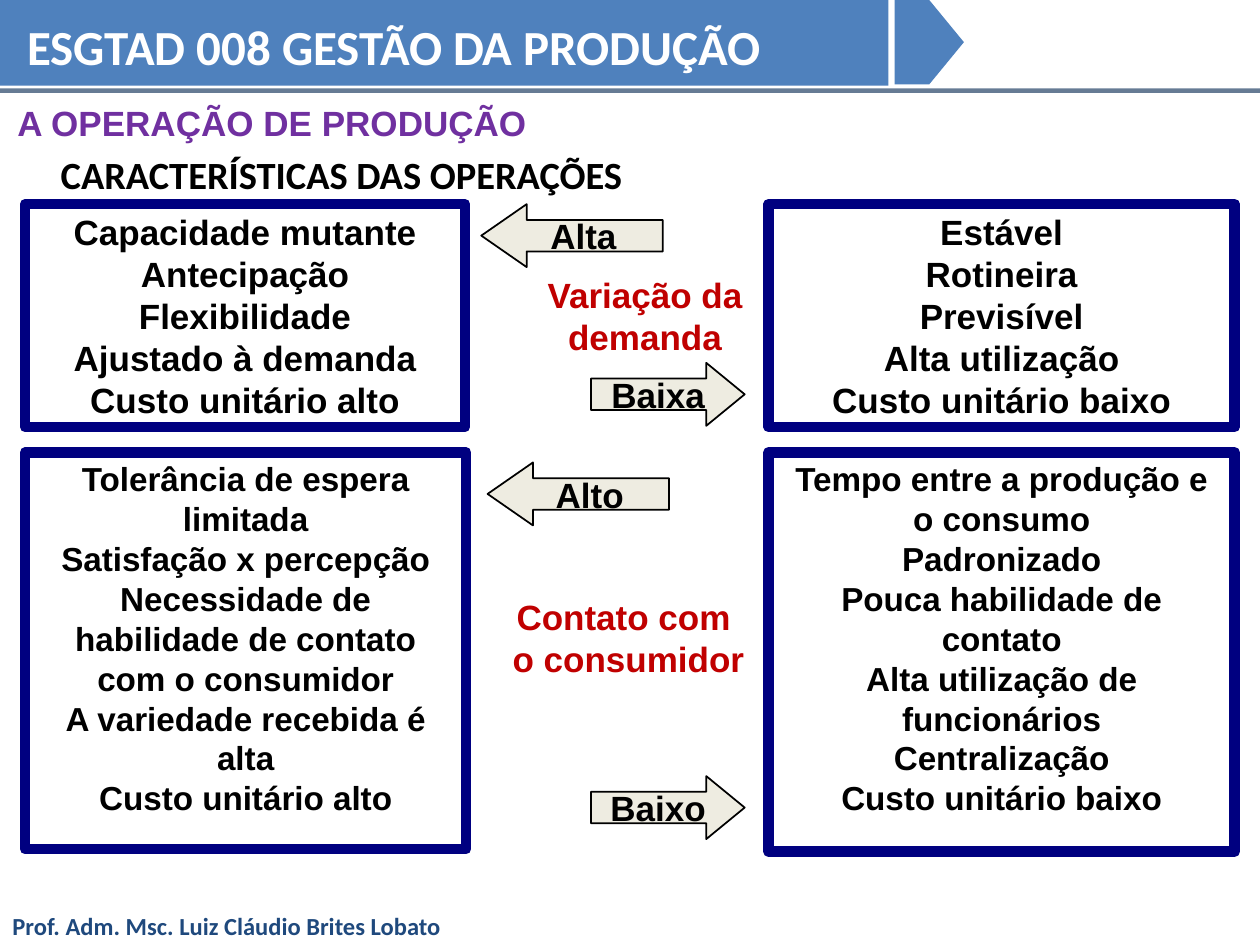
from lxml import etree
from pptx import Presentation
from pptx.dml.color import RGBColor
from pptx.enum.shapes import MSO_CONNECTOR, MSO_SHAPE as SHAPE
from pptx.enum.text import MSO_ANCHOR as ANCHOR, PP_ALIGN as ALIGN
from pptx.oxml.ns import qn
from pptx.util import Inches, Pt


def rgb(value):
    return RGBColor.from_string(value)


class Deck:
    BLUE, NAVY, RED, BEIGE = "4F81BD", "000080", "C00000", "EEECE1"

    def __init__(self):
        self.prs = Presentation()
        self.prs.slide_width, self.prs.slide_height = Inches(10), Inches(7.5)
        self.s = self.prs.slides.add_slide(self.prs.slide_layouts[6])

    def add_lines(self, tf, lines, size, color="000000", font="Arial", align=ALIGN.CENTER):
        for i, line in enumerate(lines):
            p = tf.paragraphs[0] if i == 0 else tf.add_paragraph()
            p.alignment = align
            r = p.add_run()
            r.text = line
            r.font.size, r.font.bold, r.font.name = Pt(size), True, font
            r.font.color.rgb = rgb(color)

    def text(self, x, y, w, h, lines, size, **style):
        tb = self.s.shapes.add_textbox(*map(Inches, (x, y, w, h)))
        tb.text_frame.word_wrap = True
        self.add_lines(tb.text_frame, lines, size, **style)

    def shape(self, kind, x, y, w, h, fill=None, line=None, width=1):
        sp = self.s.shapes.add_shape(kind, *map(Inches, (x, y, w, h)))
        sp.shadow.inherit = False
        if fill:
            sp.fill.solid()
            sp.fill.fore_color.rgb = rgb(fill)
        else:
            sp.fill.background()
        if line:
            sp.line.color.rgb = rgb(line)
            sp.line.width = Pt(width)
        else:
            sp.line.fill.background()
        return sp

    def box(self, x, y, w, h, lines, size):
        sp = self.shape(SHAPE.RECTANGLE, x, y, w, h, line=self.NAVY, width=6)
        tf = sp.text_frame
        tf.word_wrap, tf.vertical_anchor = True, ANCHOR.TOP
        self.add_lines(tf, lines, size)

    def arrow(self, x, y, w, head, label, left=False):
        sp = self.shape(SHAPE.RIGHT_ARROW, x, y, w, 0.5, self.BEIGE, "000000")
        sp.adjustments[0], sp.adjustments[1] = 0.5, head
        tf = sp.text_frame
        tf.word_wrap, tf.vertical_anchor = False, ANCHOR.MIDDLE
        self.add_lines(tf, [label], 20)
        if left:  # turn the arrow round, keep its label upright
            sp.rotation = 180
            sp._element.txBody.find(qn("a:bodyPr")).set("rot", "10800000")

    def rule(self, y, color, width, opacity):
        c = self.s.shapes.add_connector(
            MSO_CONNECTOR.STRAIGHT, 0, Inches(y), Inches(10), Inches(y))
        c.line.color.rgb, c.line.width = rgb(color), Pt(width)
        clr = c._element.spPr.find(".//" + qn("a:srgbClr"))
        etree.SubElement(clr, qn("a:alpha")).set("val", str(opacity * 1000))
        etree.SubElement(c._element.spPr, qn("a:effectLst"))


def main():
    d = Deck()

    # Banner and footer
    d.shape(SHAPE.RECTANGLE, 0, 0, 7.05, 0.68, d.BLUE)
    d.rule(0.72, "17375E", 2.5, 65)
    d.text(0, 7.18, 4.06, 0.34, ["Prof. Adm. Msc. Luiz Cláudio Brites Lobato"], 14,
           color="1F497D", font="Calibri", align=ALIGN.LEFT)
    d.shape(SHAPE.PENTAGON, 7.1, 0, 0.55, 0.67, d.BLUE)

    # Headings
    d.text(0.12, 0.08, 6.93, 0.52, ["ESGTAD 008 GESTÃO DA PRODUÇÃO"], 28,
           color="FFFFFF", font="Calibri", align=ALIGN.LEFT)
    d.text(0.04, 0.76, 8.5, 0.39, ["A OPERAÇÃO DE PRODUÇÃO"], 20,
           color="7030A0", align=ALIGN.LEFT)
    d.text(0.35, 1.15, 4.72, 0.43, ["CARACTERÍSTICAS DAS OPERAÇÕES"], 22, font="Calibri")

    # Demand variation
    d.box(0.2, 1.62, 3.49, 1.77, [
        "Capacidade mutante", "Antecipação", "Flexibilidade",
        "Ajustado à demanda", "Custo unitário alto"], 20)
    d.box(6.1, 1.62, 3.7, 1.77, [
        "Estável", "Rotineira", "Previsível", "Alta utilização",
        "Custo unitário baixo"], 20)
    d.text(3.82, 2.12, 2.6, 0.88, ["Variação da", "demanda"], 20, color=d.RED)

    # Contact with the consumer
    d.box(0.2, 3.59, 3.5, 3.15, [
        "Tolerância de espera limitada",
        "Satisfação x percepção Necessidade de habilidade de contato",
        "com o consumidor", "A variedade recebida é alta",
        "Custo unitário alto"], 19)
    d.box(6.1, 3.59, 3.7, 3.17, [
        "Tempo entre a produção e o consumo", "Padronizado",
        "Pouca habilidade de contato", "Alta utilização de funcionários",
        "Centralização", "Custo unitário baixo"], 19)
    d.text(3.82, 4.68, 2.26, 1.35, ["Contato com", " o consumidor"], 20, color=d.RED)

    # High arrows point left, low arrows point right
    for x, y, label in ((3.82, 1.62, "Alta"), (3.87, 3.67, "Alto")):
        d.arrow(x, y, 1.44, 0.72, label, left=True)
    for y, label in ((2.88, "Baixa"), (6.16, "Baixo")):
        d.arrow(4.69, y, 1.22, 0.61, label)

    d.prs.save("out.pptx")


if __name__ == "__main__":
    main()
